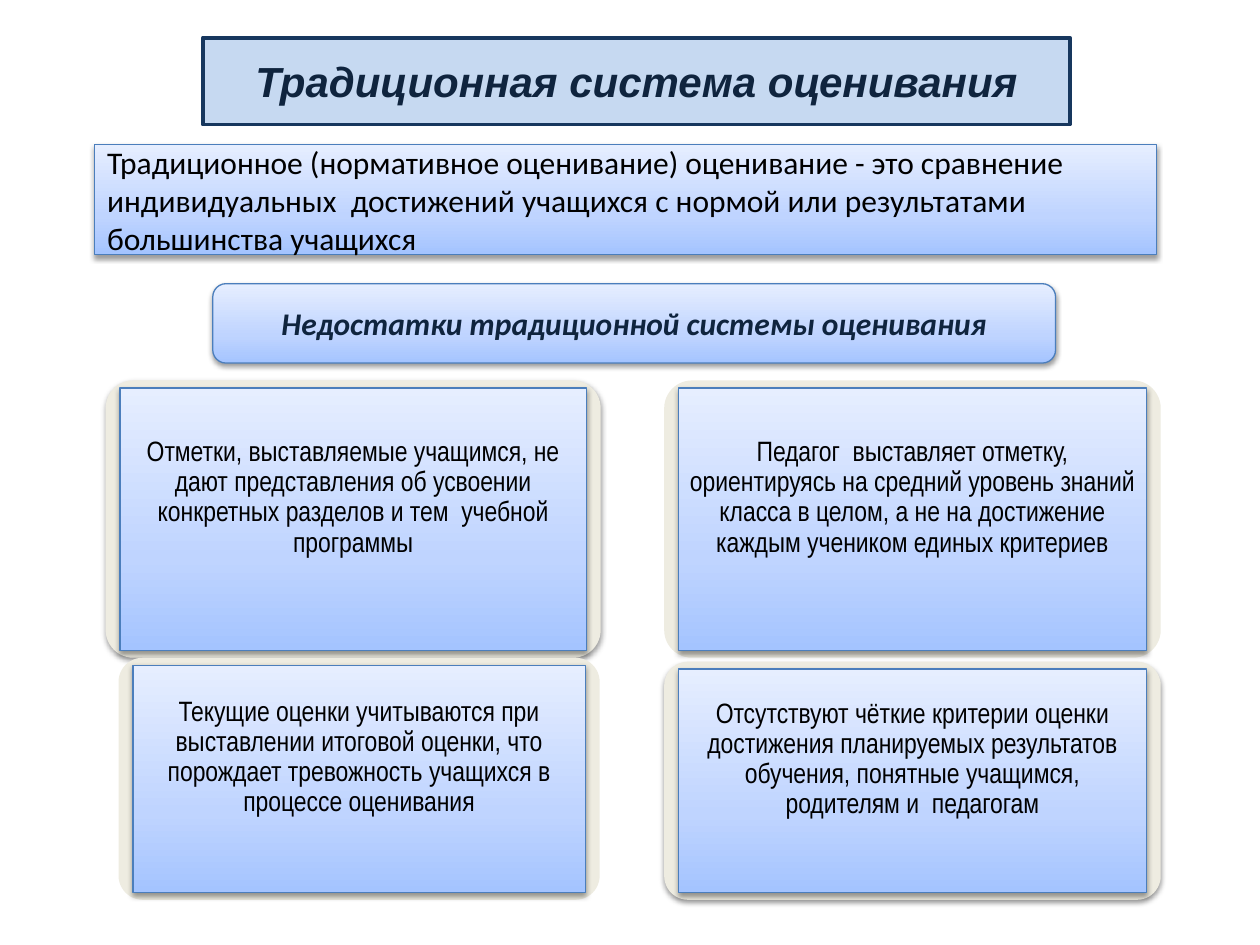
from dataclasses import dataclass, field

from lxml.etree import SubElement
from pptx import Presentation
from pptx.dml.color import RGBColor
from pptx.enum.shapes import MSO_SHAPE as Preset
from pptx.enum.text import MSO_ANCHOR as Anchor, MSO_AUTO_SIZE as AutoSize, PP_ALIGN as Align
from pptx.oxml.ns import qn
from pptx.util import Cm, Pt

CARDS = [
    ("Отметки, выставляемые учащимся, не дают представления об усвоении "
     "конкретных разделов и тем  учебной программы", (2.13, 7.67, 9.98, 5.59), True),
    ("Педагог  выставляет отметку, ориентируясь на средний уровень знаний класса "
     "в целом, а не на достижение каждым учеником единых критериев",
     (13.39, 7.67, 10.01, 5.59), False),
    ("Текущие оценки учитываются при выставлении итоговой оценки, что порождает "
     "тревожность учащихся в процессе оценивания", (2.39, 13.26, 9.7, 4.88), False),
    ("Отсутствуют чёткие критерии оценки достижения планируемых результатов "
     "обучения, понятные учащимся, родителям и  педагогам",
     (13.39, 13.34, 10.01, 4.8), True),
]


def color(value):
    return RGBColor.from_string(value)


def write(shape, text, font="Calibri", size=18, ink="000000", strong=False,
          align=Align.CENTER, spacing=None, insets=(0.25, 0.13, 0.25, 0.13)):
    frame = shape.text_frame
    frame.word_wrap = True
    frame.auto_size = AutoSize.NONE
    frame.vertical_anchor = Anchor.MIDDLE
    (frame.margin_left, frame.margin_top,
     frame.margin_right, frame.margin_bottom) = map(Cm, insets)
    paragraph = frame.paragraphs[0]
    paragraph.alignment = align
    paragraph.line_spacing = spacing
    run = paragraph.add_run()
    run.text = text
    run.font.name = font
    run.font.size = Pt(size)
    run.font.bold = run.font.italic = strong
    run.font.color.rgb = color(ink)


@dataclass
class SlideBuilder:
    slide: object
    gradient: list = field(
        default_factory=lambda: [(0, "A4C4FF"), (35, "BFD4FF"), (100, "E6EEFF")])
    border: str = "4B7EBC"
    backing: str = "EEECE1"
    dark: str = "0F243E"

    def title(self, text, box):
        title = self.slide.shapes.title
        title.left, title.top, title.width, title.height = map(Cm, box)
        title.fill.solid()
        title.fill.fore_color.rgb = color("C6D9F1")
        title.line.color.rgb = color("17375E")
        title.line.width = Pt(2.25)
        write(title, text, font="Arial", size=24, ink=self.dark, strong=True)

    def cast_shadow(self, shape):
        effects = shape._element.spPr.find(qn("a:effectLst"))
        shadow = SubElement(effects, qn("a:outerShdw"), blurRad=str(Pt(3.1)),
                            dist=str(Pt(1.6)), dir="5400000", rotWithShape="0")
        black = SubElement(shadow, qn("a:srgbClr"), val="000000")
        SubElement(black, qn("a:alpha"), val="38000")

    def fill_gradient(self, shape):
        shape.fill.gradient()
        shape.fill.gradient_angle = 90
        stops = shape._element.spPr.find(qn("a:gradFill")).find(qn("a:gsLst"))
        stops.clear()
        for position, tint in self.gradient:
            stop = SubElement(stops, qn("a:gs"), pos=str(position * 1000))
            SubElement(stop, qn("a:srgbClr"), val=tint)

    def panel(self, box, preset=Preset.RECTANGLE, shapes=None):
        panel = (shapes or self.slide.shapes).add_shape(preset, *map(Cm, box))
        panel.shadow.inherit = False
        self.fill_gradient(panel)
        panel.line.color.rgb = color(self.border)
        panel.line.width = Pt(0.75)
        self.cast_shadow(panel)
        return panel

    def card(self, text, box, raised):
        group = self.slide.shapes.add_group_shape()
        backing = group.shapes.add_shape(Preset.ROUNDED_RECTANGLE, *map(Cm, box))
        backing.adjustments[0] = 0.1
        backing.shadow.inherit = False
        backing.fill.solid()
        backing.fill.fore_color.rgb = color(self.backing)
        backing.line.fill.background()
        if raised:
            self.cast_shadow(backing)
        left, top, width, height = box
        inner = (left + 0.29, top + 0.15, width - 0.58, height - 0.3)
        write(self.panel(inner, shapes=group.shapes), text, font="Arial Narrow",
              size=16, spacing=0.9, insets=(0.18, 0.18, 0.18, 1.04))


def main():
    deck = Presentation()
    deck.slide_width, deck.slide_height = Cm(25.4), Cm(19.05)
    builder = SlideBuilder(deck.slides.add_slide(deck.slide_layouts[5]))
    builder.title("Традиционная система оценивания", (4.09, 0.76, 17.48, 1.75))

    definition = builder.panel((1.91, 2.92, 21.41, 2.21))
    write(definition, "Традиционное (нормативное оценивание) оценивание - это сравнение "
          "индивидуальных  достижений учащихся с нормой или результатами "
          "большинства учащихся", align=Align.LEFT)

    drawbacks = builder.panel((4.29, 5.72, 16.99, 1.6), Preset.ROUNDED_RECTANGLE)
    write(drawbacks, "Недостатки традиционной системы оценивания",
          ink=builder.dark, strong=True)

    for text, box, raised in CARDS:
        builder.card(text, box, raised)
    deck.save("out.pptx")


if __name__ == "__main__":
    main()
